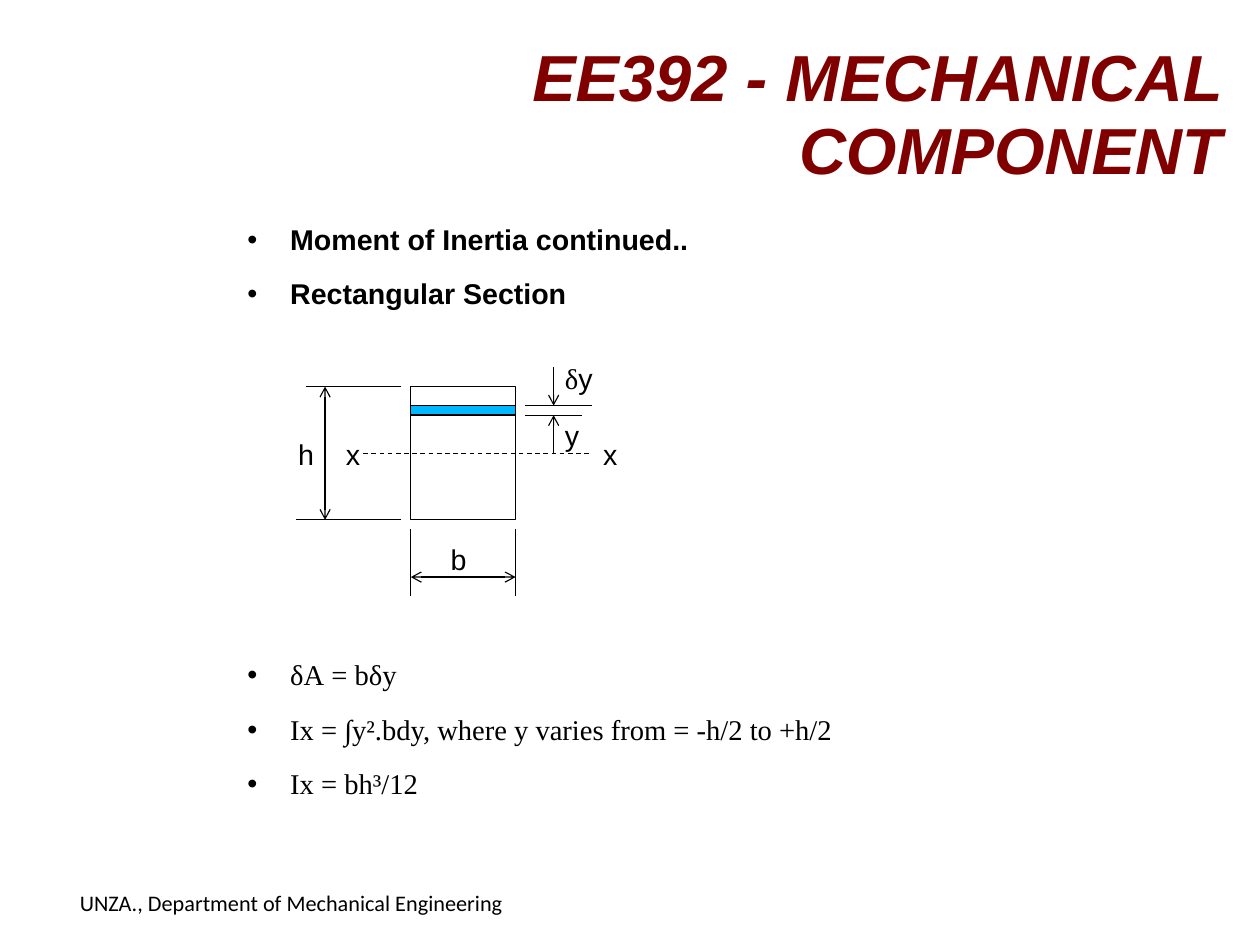
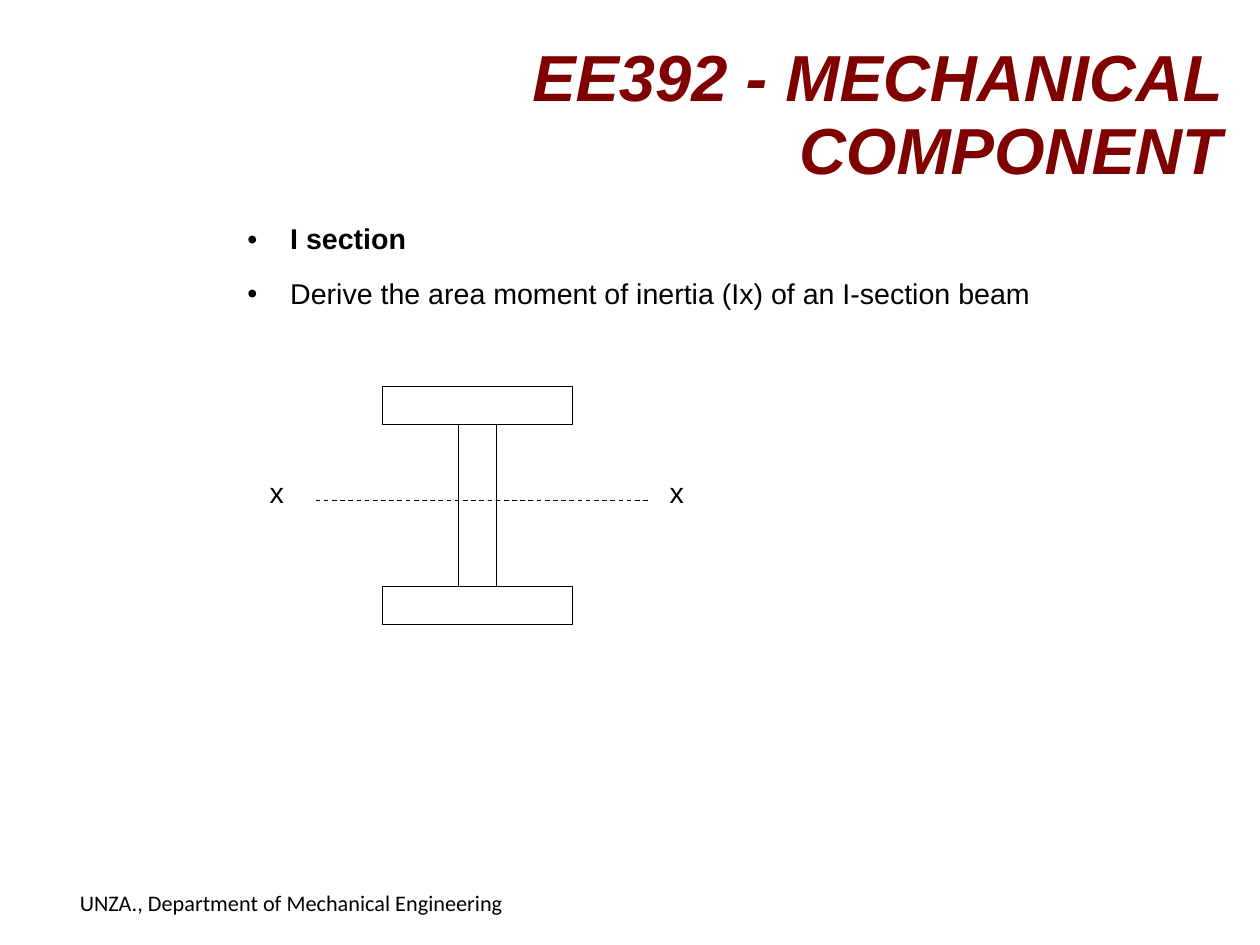
"""Build two lecture slides on the moment of inertia of beam sections."""
import pptx
import pptx.dml.color
import pptx.enum.dml
import pptx.enum.shapes
import pptx.enum.text
import pptx.oxml.ns
import pptx.util
from lxml import etree

Pt = pptx.util.Pt
qn = pptx.oxml.ns.qn
BLACK, WHITE, MAROON, BLUE = "000000", "FFFFFF", "800000", "00B8FF"
SANS, SERIF, FOOT = "Arial", "Times New Roman", "Calibri"
LEFT, TOP = 258.8, 243.5


def paint(color, value):
    color.rgb = pptx.dml.color.RGBColor.from_string(value)


def add_text(page, area, lines, size=18, color=BLACK, bold=False, italic=False,
             spacing=0.93, margins=(7.2, 3.6, 7.2, 3.6), bullets=False):
    box = page.shapes.add_textbox(*[Pt(value) for value in area])
    frame = box.text_frame
    frame.word_wrap = True
    frame.margin_left, frame.margin_top, frame.margin_right, frame.margin_bottom = [
        Pt(value) for value in margins]
    for number, spans in enumerate(lines):
        paragraph = frame.add_paragraph() if number else frame.paragraphs[0]
        paragraph.line_spacing = spacing
        if bullets:
            paragraph.space_after = Pt(14.2)
            properties = paragraph._p.get_or_add_pPr()
            properties.set("marL", str(Pt(27)))
            properties.set("indent", str(-Pt(27)))
            tint = etree.SubElement(properties, qn("a:buClr"))
            etree.SubElement(tint, qn("a:srgbClr"), val=BLACK)
            etree.SubElement(properties, qn("a:buFont"), typeface=SANS)
            etree.SubElement(properties, qn("a:buChar"), char="•")
        for text, font in spans:
            span = paragraph.add_run()
            span.text = text
            span.font.name = font
            span.font.size = Pt(size)
            span.font.bold = bold
            span.font.italic = italic
            paint(span.font.color, color)
    return frame


slides = [
    {
        "bullets": [
            [("Moment of Inertia continued..", SANS)],
            [("Rectangular Section", SANS)],
            [("δА = bδy", SERIF)],
            [("Ix = ∫y².bdy, where y varies from = -h/2 to +h/2", SERIF)],
            [("Ix = bh³/12", SERIF)],
        ],
        "bold lines": 2,
        "figure gap": 220,
        "body height": 368.6,
        "rectangles": [(0, 0, 66, 84, None), (0, 12, 66, 6, BLUE)],
        "lines": [
            (-30, 42, 114, 42, "dash"),
            (72, 18, 108, 18, ""),
            (72, 12, 114, 12, ""),
            (90, 42, 90, 18, "tail"),
            (90, -12, 90, 12, "tail"),
            (-6, 0, -66, 0, ""),
            (-6, 84, -72, 84, ""),
            (-54, 0, -54, 84, "head tail"),
            (0, 90, 0, 132, ""),
            (66, 90, 66, 132, ""),
            (0, 120, 66, 120, "head tail"),
        ],
        "labels": [
            (114, 30, [("x", SANS)]),
            (-48, 30, [("x", SANS)]),
            (90, 18, [("y", SANS)]),
            (90, -18, [("δ", SERIF), ("y", SANS)]),
            (-78, 30, [("h", SANS)]),
            (18, 96, [("b", SANS)]),
        ],
    },
    {
        "bullets": [
            [("I section", SANS)],
            [("Derive the area moment of inertia (Ix) of an I-section beam", SANS)],
        ],
        "bold lines": 1,
        "figure gap": 14.2,
        "body height": 299.5,
        "rectangles": [(-18, 0, 120, 24, None), (-18, 126, 120, 24, WHITE),
                       (30, 24, 24, 102, None)],
        "lines": [(-60, 72, 150, 72, "dash")],
        "labels": [(156, 54, [("x", SANS)]), (-96, 54, [("x", SANS)])],
    },
]

deck = pptx.Presentation()
deck.slide_width, deck.slide_height = Pt(793.75), Pt(595.25)

for content in slides:
    page = deck.slides.add_slide(deck.slide_layouts[6])

    title = add_text(page, (286.3, 23.8, 483.8, 98.6),
                     [[("EE392 - MECHANICAL COMPONENT", SANS)]], size=41, color=MAROON,
                     bold=True, italic=True, margins=(0, 0, 0, 0))
    title.vertical_anchor = pptx.enum.text.MSO_ANCHOR.MIDDLE
    title.paragraphs[0].alignment = pptx.enum.text.PP_ALIGN.RIGHT

    body = add_text(page, (155.8, 139.2, 611.3, content["body height"]), content["bullets"],
                    margins=(0, 2.2, 0, 0), bullets=True)
    headings = body.paragraphs[:content["bold lines"]]
    for heading in headings:
        heading.runs[0].font.bold = True
    headings[-1].space_after = Pt(content["figure gap"])

    for x, y, width, height, fill in content["rectangles"]:
        rectangle = page.shapes.add_shape(pptx.enum.shapes.MSO_SHAPE.RECTANGLE, Pt(LEFT + x),
                                          Pt(TOP + y), Pt(width), Pt(height))
        rectangle.shadow.inherit = False
        rectangle.line.width = Pt(0.75)
        paint(rectangle.line.color, BLACK)
        if fill:
            rectangle.fill.solid()
            paint(rectangle.fill.fore_color, fill)
        else:
            rectangle.fill.background()

    for x1, y1, x2, y2, style in content["lines"]:
        line = page.shapes.add_connector(pptx.enum.shapes.MSO_CONNECTOR.STRAIGHT, Pt(LEFT + x1),
                                         Pt(TOP + y1), Pt(LEFT + x2), Pt(TOP + y2))
        line.line.width = Pt(0.75)
        paint(line.line.color, BLACK)
        if style == "dash":
            line.line.dash_style = pptx.enum.dml.MSO_LINE.DASH
        for end in ("head", "tail"):
            if end in style:
                etree.SubElement(line.line._get_or_add_ln(), qn(f"a:{end}End"), type="arrow")
        etree.SubElement(line._element.spPr, qn("a:effectLst"))

    for x, y, spans in content["labels"]:
        add_text(page, (LEFT + x, TOP + y, 12 + 18 * len(spans), 27.4), [spans])

    add_text(page, (43.2, 554.4, 381.6, 31),
             [[("UNZA., Department of Mechanical Engineering", FOOT)]], size=14, spacing=1.12)

deck.save("out.pptx")
